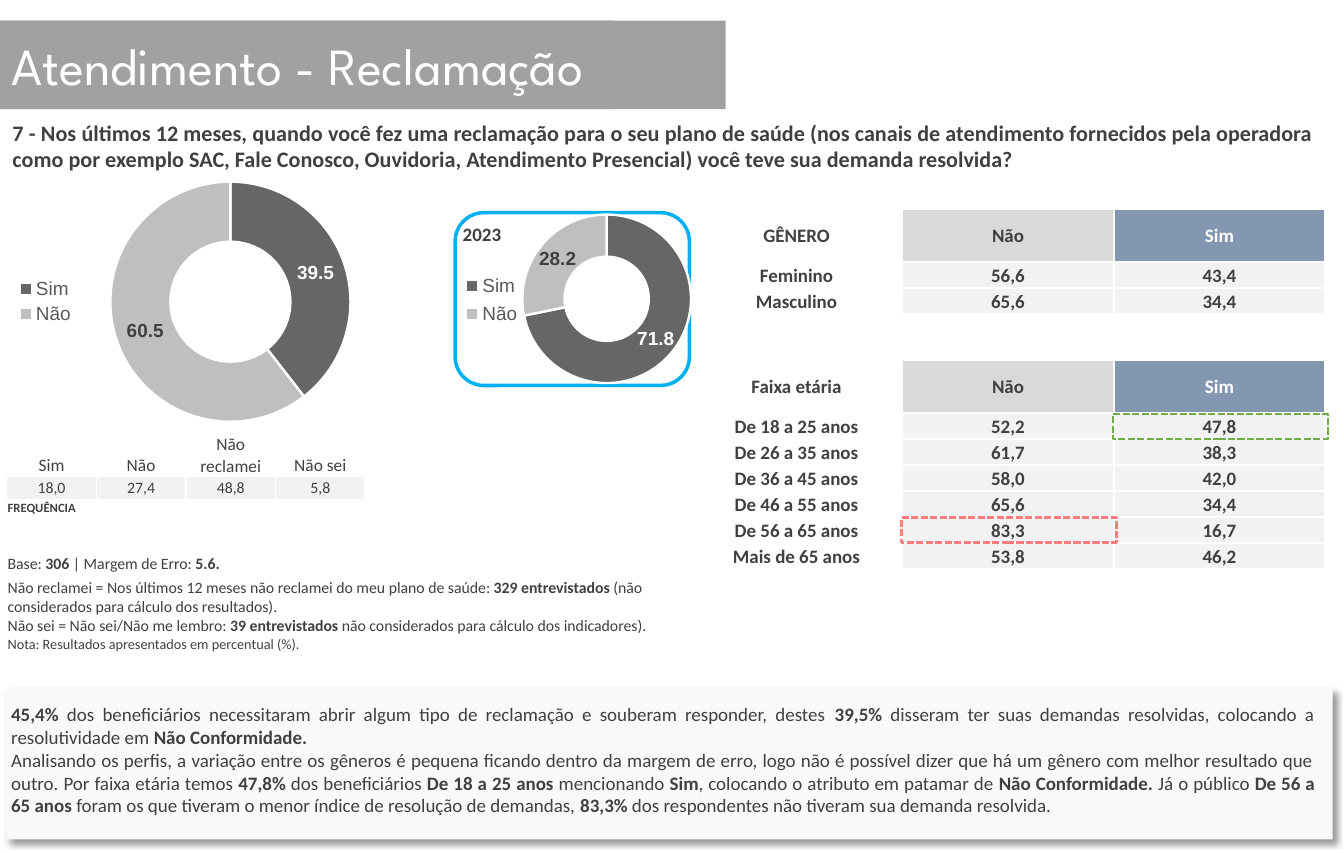
from dataclasses import dataclass
from typing import Any

import pptx
import pptx.chart.data
import pptx.dml.color
import pptx.enum.chart
import pptx.enum.dml
import pptx.enum.shapes
import pptx.enum.text
import pptx.oxml
import pptx.oxml.ns
import pptx.util

Cm = pptx.util.Cm
Pt = pptx.util.Pt
SHAPE = pptx.enum.shapes.MSO_SHAPE
ALIGN = pptx.enum.text.PP_ALIGN
ANCHOR = pptx.enum.text.MSO_ANCHOR
LEGEND = pptx.enum.chart.XL_LEGEND_POSITION
NS = pptx.oxml.ns.nsdecls("a", "c")

INK, WHITE, BAR, CELL = "404040", "FFFFFF", "A1A1A1", "F2F2F2"
HEADER_FILLS = (None, "D9D9D9", "8497B0")
ROW_FILLS = (None, CELL, CELL)
Box = tuple[float, float, float, float]


@dataclass
class Cell:
    text: str = ""
    size: float = 12
    color: str = INK
    fill: str | None = None
    align: Any = ALIGN.CENTER
    anchor: Any = ANCHOR.MIDDLE


@dataclass
class Outline:
    box: Box
    color: str
    width: float
    kind: Any = SHAPE.RECTANGLE
    dash: Any = None


@dataclass
class Doughnut:
    box: Box
    values: tuple[float, float]
    plot: Box
    legend: Box


def rgb(color: str) -> pptx.dml.color.RGBColor:
    return pptx.dml.color.RGBColor.from_string(color)


def apply(target: Any, values: dict[str, Any]) -> None:
    for name, value in values.items():
        setattr(target, name, value)


def style_font(font: Any, size: float, color: str, bold: bool = False, name: str = "Calibri") -> None:
    apply(font, {"size": Pt(size), "bold": bold, "name": name})
    font.color.rgb = rgb(color)


def write(tf: Any, text: str, size: float, color: str = INK, align: Any = ALIGN.LEFT, name: str = "Calibri") -> None:
    for i, line in enumerate(text.split("\n")):
        p = tf.paragraphs[0] if i == 0 else tf.add_paragraph()
        p.alignment = align
        for j, part in enumerate(line.split("**")):
            if part:
                r = p.add_run()
                r.text = part
                style_font(r.font, size, color, j % 2 == 1, name)


def add_box(s: Any, kind: Any, box: Box, fill: str | None = None) -> Any:
    sp = s.shapes.add_shape(kind, *map(Cm, box))
    sp.shadow.inherit = False
    sp.line.fill.background()
    if fill:
        sp.fill.solid()
        sp.fill.fore_color.rgb = rgb(fill)
    else:
        sp.fill.background()
    return sp


def add_outline(s: Any, o: Outline) -> None:
    sp = add_box(s, o.kind, o.box)
    sp.line.color.rgb = rgb(o.color)
    apply(sp.line, {"width": Pt(o.width), "dash_style": o.dash})


def add_text(s: Any, box: Box, text: str, size: float, align: Any = ALIGN.LEFT,
             inset: tuple[float, float] = (0.25, 0.13), wrap: bool = True) -> None:
    tf = s.shapes.add_textbox(*map(Cm, box)).text_frame
    x, y = map(Cm, inset)
    apply(tf, {"word_wrap": wrap, "margin_left": x, "margin_right": x, "margin_top": y, "margin_bottom": y})
    write(tf, text, size, align=align)


def add_table(s: Any, left: float, top: float, col: float, heights: list[float],
              rows: list[list[Cell]], border: float) -> Any:
    n = len(rows[0])
    frame = s.shapes.add_table(len(rows), n, Cm(left), Cm(top), Cm(col * n), Cm(sum(heights)))
    table = frame.table
    apply(table, {"first_row": False, "horz_banding": False})
    for column in table.columns:
        column.width = Cm(col)
    for i, row in enumerate(rows):
        table.rows[i].height = Cm(heights[i])
        for j, item in enumerate(row):
            cell = table.cell(i, j)
            apply(cell, {"vertical_anchor": item.anchor, "margin_left": Cm(0.02), "margin_right": Cm(0.02),
                         "margin_top": Cm(0.02), "margin_bottom": 0})
            for side in "LRTB":
                cell._tc.get_or_add_tcPr().append(pptx.oxml.parse_xml(
                    f'<a:ln{side} {NS} w="{Pt(border)}"><a:solidFill><a:srgbClr val="{WHITE}"/>'
                    f'</a:solidFill></a:ln{side}>'))
            if item.fill:
                cell.fill.solid()
                cell.fill.fore_color.rgb = rgb(item.fill)
            else:
                cell.fill.background()
            write(cell.text_frame, item.text, item.size, item.color, item.align)
    return table


def layout(box: Box, inner: str = "") -> Any:
    sizes = "".join(f'<c:{tag} val="{v}"/>' for tag, v in zip("xywh", box))
    return pptx.oxml.parse_xml(f'<c:layout {NS}><c:manualLayout>{inner}<c:xMode val="edge"/>'
                               f'<c:yMode val="edge"/>{sizes}</c:manualLayout></c:layout>')


def add_doughnut(s: Any, d: Doughnut) -> None:
    data = pptx.chart.data.CategoryChartData(number_format="0.0")
    data.categories = ["Sim", "Não"]
    data.add_series("Resolvida", d.values)
    chart = s.shapes.add_chart(pptx.enum.chart.XL_CHART_TYPE.DOUGHNUT, *map(Cm, d.box), data).chart
    apply(chart, {"has_title": False, "has_legend": True})
    style_font(chart.font, 10, "000000", name="Arial")
    apply(chart.legend, {"position": LEGEND.LEFT, "include_in_layout": False})
    style_font(chart.legend.font, 12, "595959", name="Arial")
    plot = chart.plots[0]
    apply(plot, {"vary_by_categories": True, "has_data_labels": True})
    series = plot.series[0]
    labels = series.data_labels
    apply(labels, {"show_value": True, "show_percentage": False, "number_format": "0.0",
                   "number_format_is_linked": False})
    style_font(labels.font, 12, WHITE, True, "Arial")
    style_font(series.points[1].data_label.font, 12, INK, True, "Arial")
    for i, color in enumerate(("666666", "BFBFBF")):
        fmt = series.points[i].format
        fmt.fill.solid()
        fmt.fill.fore_color.rgb = rgb(color)
        fmt.line.color.rgb = rgb(WHITE)
        fmt.line.width = Pt(1.5)
    area = chart._chartSpace.xpath(".//c:plotArea")[0]
    for old in chart._chartSpace.xpath(".//c:plotArea/c:layout | .//c:legend/c:layout"):
        old.getparent().remove(old)
    area.insert(0, layout(d.plot, '<c:layoutTarget val="inner"/>'))
    chart._chartSpace.xpath(".//c:legendPos")[0].addnext(layout(d.legend))


def profile_row(text: str, fills: tuple, last: str = INK) -> list[Cell]:
    return [Cell(f"**{t}**", fill=f, color=c) for t, f, c in zip(text.split("|"), fills, (INK, INK, last))]


def main() -> None:
    prs = pptx.Presentation()
    apply(prs, {"slide_width": Cm(30), "slide_height": Cm(19.05)})
    s = prs.slides.add_slide(prs.slide_layouts[5])

    add_box(s, SHAPE.ROUNDED_RECTANGLE, (-0.61, 0.46, 14.6, 1.98), BAR)
    title = s.shapes.title
    apply(title, {"left": 0, "top": Cm(0.46), "width": Cm(16.2), "height": Cm(1.98)})
    title._element.spPr.append(pptx.oxml.parse_xml(f'<a:prstGeom {NS} prst="roundRect"><a:avLst/></a:prstGeom>'))
    title.fill.solid()
    title.fill.fore_color.rgb = rgb(BAR)
    apply(title.text_frame, {"vertical_anchor": ANCHOR.MIDDLE, "word_wrap": True,
                             "auto_size": pptx.enum.text.MSO_AUTO_SIZE.NONE})
    write(title.text_frame, "Atendimento - Reclamação", 33, WHITE, name="League Spartan")
    s.shapes._spTree.append(title._element)

    add_text(s, (0, 2.51, 29.6, 1.47), "**7 - Nos últimos 12 meses, quando você fez uma reclamação para o seu plano de saúde (nos canais de atendimento fornecidos pela operadora como por exemplo SAC, Fale Conosco, Ouvidoria, Atendimento Presencial) você teve sua demanda resolvida?**", 14, ALIGN.JUSTIFY, (0.28, 0.15))

    notes = [("Base: **306** | Margem de Erro: **5.6.**", 10),
             ("Não reclamei = Nos últimos 12 meses não reclamei do meu plano de saúde: **329 entrevistados **(não considerados para cálculo dos resultados).\nNão sei = Não sei/Não me lembro: **39 entrevistados** não considerados para cálculo dos indicadores).", 10),
             ("Nota: Resultados apresentados em percentual (%).", 9)]
    add_table(s, 0.15, 12.37, 15.65, [0.53, 1.29, 0.53],
              [[Cell(t, size, align=ALIGN.LEFT, anchor=ANCHOR.TOP)] for t, size in notes], 1)

    panel = add_box(s, SHAPE.RECTANGLE, (0.15, 15.37, 29.6, 3.38), "F9F9F9")
    panel._element.spPr.xpath("a:effectLst")[0].append(pptx.oxml.parse_xml(
        f'<a:outerShdw {NS} blurRad="{Pt(4)}" dist="{Pt(3)}" dir="2700000" algn="tl" rotWithShape="0">'
        '<a:srgbClr val="000000"><a:alpha val="40000"/></a:srgbClr></a:outerShdw>'))
    add_text(s, (0, 15.57, 29.6, 2.82), "**45,4%** dos beneficiários necessitaram abrir algum tipo de reclamação e souberam responder, destes **39,5%** disseram ter suas demandas resolvidas, colocando a resolutividade em **Não Conformidade.**\nAnalisando os perfis, a variação entre os gêneros é pequena ficando dentro da margem de erro, logo não é possível dizer que há um gênero com melhor resultado que outro. Por faixa etária temos **47,8% **dos beneficiários **De 18 a 25 anos **mencionando **Sim**, colocando o atributo em patamar de **Não Conformidade. **Já o público **De 56 a 65 anos **foram os que tiveram o menor índice de resolução de demandas, **83,3%** dos respondentes não tiveram sua demanda resolvida.", 12, ALIGN.JUSTIFY)

    genders = ["Feminino|56,6|43,4", "Masculino|65,6|34,4"]
    ages = ["De 18 a 25 anos|52,2|47,8", "De 26 a 35 anos|61,7|38,3", "De 36 a 45 anos|58,0|42,0",
            "De 46 a 55 anos|65,6|34,4", "De 56 a 65 anos|83,3|16,7", "Mais de 65 anos|53,8|46,2"]
    rows = [profile_row("GÊNERO|Não|Sim", HEADER_FILLS, WHITE), *(profile_row(t, ROW_FILLS) for t in genders),
            [Cell()] * 3,
            profile_row("Faixa etária|Não|Sim", HEADER_FILLS, WHITE), *(profile_row(t, ROW_FILLS) for t in ages)]
    profile = add_table(s, 15.42, 4.67, 4.72, [1.19, 0.58, 0.58, 1.02, 1.19] + [0.58] * 6, rows, 1.5)
    profile.cell(3, 0).merge(profile.cell(3, 2))

    frequency = add_table(s, 0.15, 9.68, 2, [0.94, 0.53, 0.53], [
        [Cell(t, 11, anchor=ANCHOR.BOTTOM) for t in ("Sim", "Não", "Não reclamei", "Não sei")],
        [Cell(t, 10, fill=CELL) for t in ("18,0", "27,4", "48,8", "5,8")],
        [Cell("**FREQUÊNCIA**", 8, align=ALIGN.LEFT, anchor=ANCHOR.TOP)] + [Cell(size=8)] * 3], 1)
    frequency.cell(2, 0).merge(frequency.cell(2, 2))

    dash = pptx.enum.dml.MSO_LINE.SQUARE_DOT
    for o in (Outline((20.12, 11.56, 4.8, 0.56), "FF7C80", 1.5, dash=dash),
              Outline((24.84, 9.25, 4.8, 0.56), "70AD47", 1.5, dash=dash),
              Outline((10.16, 4.75, 5.23, 3.86), "00B0F0", 2.25, SHAPE.ROUNDED_RECTANGLE)):
        add_outline(s, o)
    add_text(s, (10.08, 4.85, 1.4, 0.76), "**2023**", 12, wrap=False)

    for d in (Doughnut((9.7, 4.06, 6.1, 5.23), (71.8, 28.2), (0.32, 0.14, 0.62, 0.72), (0.1, 0.37, 0.22, 0.27)),
              Doughnut((0.08, 3.68, 8.51, 6.12), (39.5, 60.5), (0.28, 0.06, 0.63, 0.88), (0.03, 0.4, 0.16, 0.2))):
        add_doughnut(s, d)

    prs.save("out.pptx")


if __name__ == "__main__":
    main()
